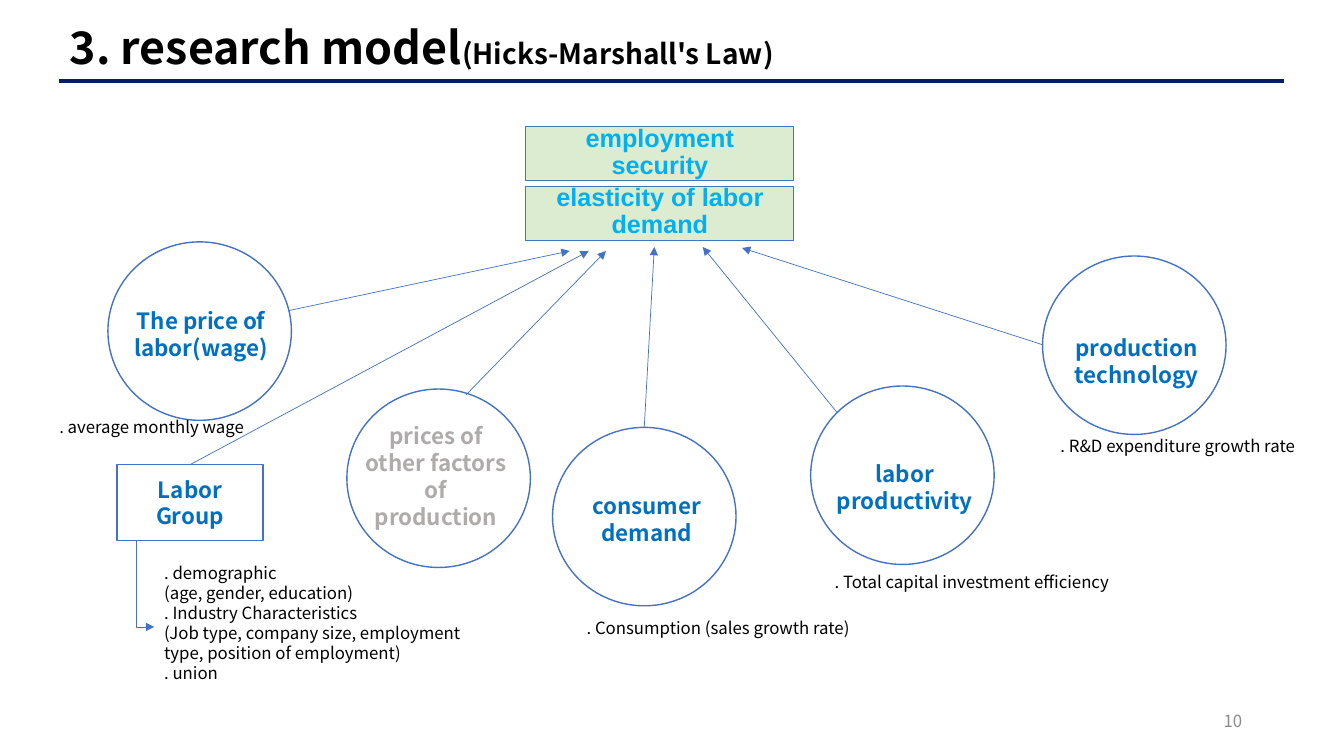
from lxml import etree
from pptx import Presentation
from pptx.dml.color import RGBColor
from pptx.enum.shapes import MSO_CONNECTOR as CONNECTOR, MSO_SHAPE as SHAPE
from pptx.enum.text import MSO_ANCHOR as ANCHOR, MSO_AUTO_SIZE as AUTO_SIZE, PP_ALIGN as ALIGN
from pptx.oxml.ns import qn
from pptx.util import Inches, Pt

SANS = "Noto Sans CJK KR"
BLACK, WHITE, GREY = "000000", "FFFFFF", "AFABAB"
NAVY, OUTLINE, BLUE, SKY, GREEN = "002060", "4472C4", "0070C0", "00B0F0", "A9D18E"

FACTORS = [
    ("The price of labor(wage)", BLUE, (1.07, 2.4), (1.18, 3), 0.64),
    ("prices of other factors of production", GREY, (3.44, 3.86), (3.51, 4.14), 1.18),
    ("consumer demand", BLUE, (5.48, 4.24), (5.6, 4.83), 0.64),
    ("labor productivity", BLUE, (8.04, 3.83), (8.16, 4.52), 0.64),
    ("production technology", BLUE, (10.34, 2.54), (10.46, 3.27), 0.64),
]
ARROWS = [
    ((2.87, 3.08), (5.65, 2.49)),
    ((4.62, 3.92), (6.01, 2.49)),
    ((6.39, 4.24), (6.49, 2.45)),
    ((8.3, 4.09), (6.97, 2.45)),
    ((10.34, 3.42), (7.36, 2.46)),
]
NOTES = [
    ([". average monthly wage"], 0.49, 4.09, 2.32, 0.3),
    ([". Consumption (sales growth rate)"], 5.72, 6.08, 3.37, 0.3),
    ([". Total capital investment efficiency"], 8.18, 5.62, 3.76, 0.3),
    ([". R&D expenditure growth rate"], 10.42, 4.27, 3.04, 0.3),
    ([
        ". demographic",
        "(age, gender, education)",
        ". Industry Characteristics",
        "(Job type, company size, employment type, position of employment)",
        ". union",
    ], 1.53, 5.53, 3.47, 1.31),
]
OUTCOMES = [
    ("elasticity of labor demand", 1.85, 1.78),
    ("employment security", 1.25, 1.2),
]


def rgb(color):
    return RGBColor.from_string(color)


def format_font(font, size, color, bold=False, name=SANS):
    font.name = name
    font.size = Pt(size)
    font.bold = bold
    font.color.rgb = rgb(color)


def write_lines(shape, lines, size, color, bold=False, name=SANS, align=ALIGN.LEFT, spacing=None):
    frame = shape.text_frame
    frame.word_wrap = True
    frame.text = "\n".join(lines)
    for paragraph in frame.paragraphs:
        paragraph.alignment = align
        if spacing:
            paragraph.line_spacing = spacing
        for run in paragraph.runs:
            format_font(run.font, size, color, bold, name)


def add_text(shapes, lines, left, top, width, height, size, color, **style):
    box = shapes.add_textbox(Inches(left), Inches(top), Inches(width), Inches(height))
    write_lines(box, lines, size, color, **style)
    box.text_frame.auto_size = AUTO_SIZE.SHAPE_TO_FIT_TEXT
    return box


def add_panel(shapes, kind, left, top, width, height, fill=WHITE, weight=1):
    shape = shapes.add_shape(kind, Inches(left), Inches(top), Inches(width), Inches(height))
    shape.shadow.inherit = False
    shape.fill.solid()
    shape.fill.fore_color.rgb = rgb(fill)
    shape.line.color.rgb = rgb(OUTLINE)
    shape.line.width = Pt(weight)
    return shape


def add_line(shapes, start, end, color=OUTLINE, weight=0.5, arrow=True, kind=CONNECTOR.STRAIGHT):
    line = shapes.add_connector(kind, *(Inches(value) for value in start + end))
    line.line.color.rgb = rgb(color)
    line.line.width = Pt(weight)
    properties = line._element.spPr
    etree.SubElement(properties, qn("a:effectLst"))
    if arrow:
        etree.SubElement(properties.find(qn("a:ln")), qn("a:tailEnd"), type="triangle")
    return line


def add_corner_arrow(shapes):
    line = add_line(shapes, (1.87, 5.7), (1.01, 5.88), kind=CONNECTOR.ELBOW)
    properties = line._element.spPr
    properties.find(qn("a:xfrm")).set("rot", str(270 * 60000))
    properties.find(qn("a:prstGeom")).set("prst", "bentConnector2")


def add_title(slide):
    title = slide.shapes.title
    title.left, title.top = Inches(0.59), Inches(0.26)
    title.width, title.height = Inches(10.04), Inches(0.47)
    title.fill.solid()
    title.fill.fore_color.rgb = rgb(WHITE)
    frame = title.text_frame
    frame.auto_size = AUTO_SIZE.NONE
    frame.vertical_anchor = ANCHOR.MIDDLE
    paragraph = frame.paragraphs[0]
    paragraph.alignment = ALIGN.LEFT
    paragraph.line_spacing = 0.9
    for text, size in (("3. research model", 32), ("(Hicks-Marshall's Law)", 20)):
        run = paragraph.add_run()
        run.text = text
        format_font(run.font, size, BLACK, bold=True)


def add_factor(shapes, label, color, circle, text, height):
    group = shapes.add_group_shape()
    add_panel(group.shapes, SHAPE.OVAL, *circle, 1.82, 1.77)
    add_text(group.shapes, [label], *text, 1.63, height, 16, color, bold=True, align=ALIGN.CENTER)


def add_outcome(shapes, label, panel_top, text_top):
    panel = add_panel(shapes, SHAPE.RECTANGLE, 5.21, panel_top, 2.66, 0.54, GREEN, 0.5)
    fill_color = panel._element.spPr.find(qn("a:solidFill"))[0]
    etree.SubElement(fill_color, qn("a:alpha"), val="40000")
    add_text(shapes, [label], 5.35, text_top, 2.39, 0.65, 18, SKY,
             bold=True, name="Arial", align=ALIGN.CENTER, spacing=0.9)


def add_labor_group(shapes):
    box = add_panel(shapes, SHAPE.RECTANGLE, 1.16, 4.61, 1.45, 0.75)
    write_lines(box, ["Labor Group"], 16, BLUE, bold=True, align=ALIGN.CENTER)
    box.text_frame.vertical_anchor = ANCHOR.MIDDLE
    add_corner_arrow(shapes)
    arrow = add_line(shapes, (1.88, 4.61), (5.84, 2.49))
    arrow.begin_connect(box, 0)


def main():
    presentation = Presentation()
    presentation.slide_width = Inches(13.33)
    presentation.slide_height = Inches(7.5)
    slide = presentation.slides.add_slide(presentation.slide_layouts[5])
    shapes = slide.shapes

    add_title(slide)
    add_line(shapes, (0.59, 0.8), (12.73, 0.8), NAVY, 3, arrow=False)
    number = add_text(shapes, ["10"], 9.42, 6.95, 3, 0.4, 12, "8C8C8C", align=ALIGN.RIGHT)
    number.text_frame.auto_size = AUTO_SIZE.NONE
    number.text_frame.vertical_anchor = ANCHOR.MIDDLE

    for factor in FACTORS:
        add_factor(shapes, *factor)
    for start, end in ARROWS:
        add_line(shapes, start, end)
    for note in NOTES:
        add_text(shapes, *note, 12, BLACK)
    add_labor_group(shapes)
    for outcome in OUTCOMES:
        add_outcome(shapes, *outcome)

    presentation.save("out.pptx")


if __name__ == "__main__":
    main()
